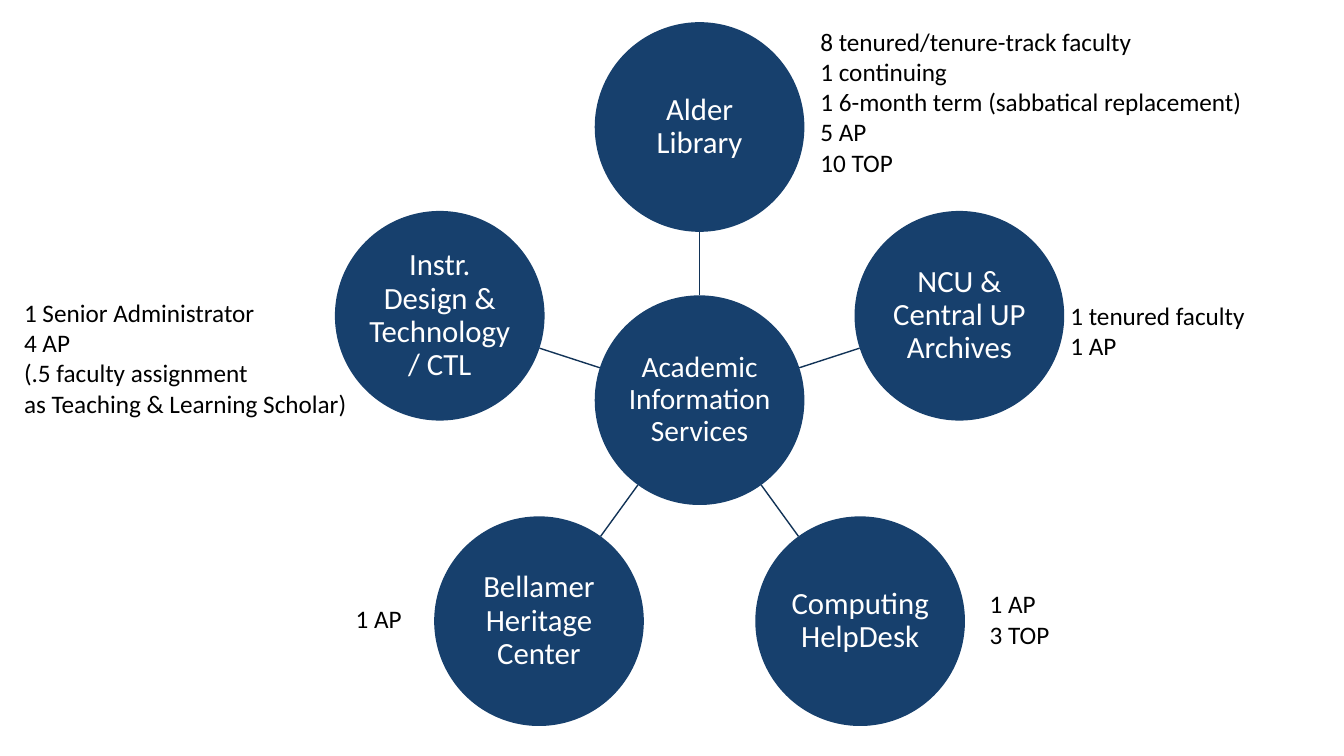
from math import cos, radians, sin

from lxml.etree import SubElement
from pptx import Presentation
from pptx.dml.color import RGBColor
from pptx.enum.shapes import MSO_CONNECTOR as Connector, MSO_SHAPE as Shape
from pptx.enum.text import MSO_ANCHOR as Anchor, MSO_AUTO_SIZE as AutoSize, PP_ALIGN as Align
from pptx.oxml.ns import qn
from pptx.util import Inches, Pt

# Grid: square cells of a tenth of an inch
CELL = Inches(0.1)
COLUMNS, ROWS = 133.33, 75

FONT = "Calibri"
NAVY, LINE_NAVY, WHITE, BLACK = "17406D", "123357", "FFFFFF", "000000"

# Radial layout, in cells
HUB_X, HUB_Y = 69.4, 39.7
RADIUS, ORBIT = 10.4, 27.1

HUB = "Academic Information Services"
# Clockwise from the top
UNITS = [
    "Alder Library",
    "NCU & Central UP Archives",
    "Computing HelpDesk",
    "Bellamer Heritage Center",
    "Instr. Design & Technology / CTL",
]
# Left, top, width and lines of each staffing note
NOTES = [
    (80.4, 2.1, 44.3, ["8 tenured/tenure-track faculty", "1 continuing",
                       "1 6-month term (sabbatical replacement)", "5 AP", "10 TOP"]),
    (105.2, 29.3, 19.5, ["1 tenured faculty", "1 AP"]),
    (97.2, 57.9, 8, ["1 AP", "3 TOP"]),
    (34.3, 59.4, 6.6, ["1 AP"]),
    (1.4, 29, 34.4, ["1 Senior Administrator", "4 AP", "(.5 faculty assignment",
                     "as Teaching & Learning Scholar)"]),
]


def cells(count):
    return round(count * CELL)


def color(hex_string):
    return RGBColor.from_string(hex_string)


def polar(angle, distance):
    """Point at a clockwise angle from the top of the hub."""
    turn = radians(angle)
    return HUB_X + distance * sin(turn), HUB_Y - distance * cos(turn)


def add_run(paragraph, text, size, hex_string):
    run = paragraph.add_run()
    run.text = text
    run.font.name = FONT
    run.font.size = Pt(size)
    run.font.color.rgb = color(hex_string)


def add_circle(slide, center, text, size):
    x, y = center
    shape = slide.shapes.add_shape(Shape.OVAL, cells(x - RADIUS), cells(y - RADIUS),
                                   cells(2 * RADIUS), cells(2 * RADIUS))
    shape.shadow.inherit = False
    shape.fill.solid()
    shape.fill.fore_color.rgb = color(NAVY)
    shape.line.fill.background()
    frame = shape.text_frame
    frame.word_wrap = True
    frame.vertical_anchor = Anchor.MIDDLE
    frame.margin_left = frame.margin_right = Inches(0.02)
    frame.margin_top = frame.margin_bottom = Inches(0.02)
    paragraph = frame.paragraphs[0]
    paragraph.alignment = Align.CENTER
    paragraph.line_spacing = 0.9
    add_run(paragraph, text, size, WHITE)


def add_spoke(slide, angle):
    ends = polar(angle, RADIUS) + polar(angle, ORBIT - RADIUS)
    spoke = slide.shapes.add_connector(Connector.STRAIGHT, *map(cells, ends))
    spoke.line.color.rgb = color(LINE_NAVY)
    spoke.line.width = Pt(1)
    SubElement(spoke.element.spPr, qn("a:effectLst"))


def add_note(slide, left, top, width, lines):
    height = 1 + 3 * len(lines)
    box = slide.shapes.add_textbox(cells(left), cells(top), cells(width), cells(height))
    frame = box.text_frame
    frame.word_wrap = False
    frame.auto_size = AutoSize.SHAPE_TO_FIT_TEXT
    for index, line in enumerate(lines):
        paragraph = frame.add_paragraph() if index else frame.paragraphs[0]
        add_run(paragraph, line, 18, BLACK)


def main():
    presentation = Presentation()
    presentation.slide_width = cells(COLUMNS)
    presentation.slide_height = cells(ROWS)
    slide = presentation.slides.add_slide(presentation.slide_layouts[6])

    # Hub with its units spread evenly around it
    add_circle(slide, (HUB_X, HUB_Y), HUB, 21)
    for index, unit in enumerate(UNITS):
        angle = index * 360 / len(UNITS)
        add_spoke(slide, angle)
        add_circle(slide, polar(angle, ORBIT), unit, 22)

    # Staffing notes beside the units
    for note in NOTES:
        add_note(slide, *note)

    presentation.save("out.pptx")


if __name__ == "__main__":
    main()
